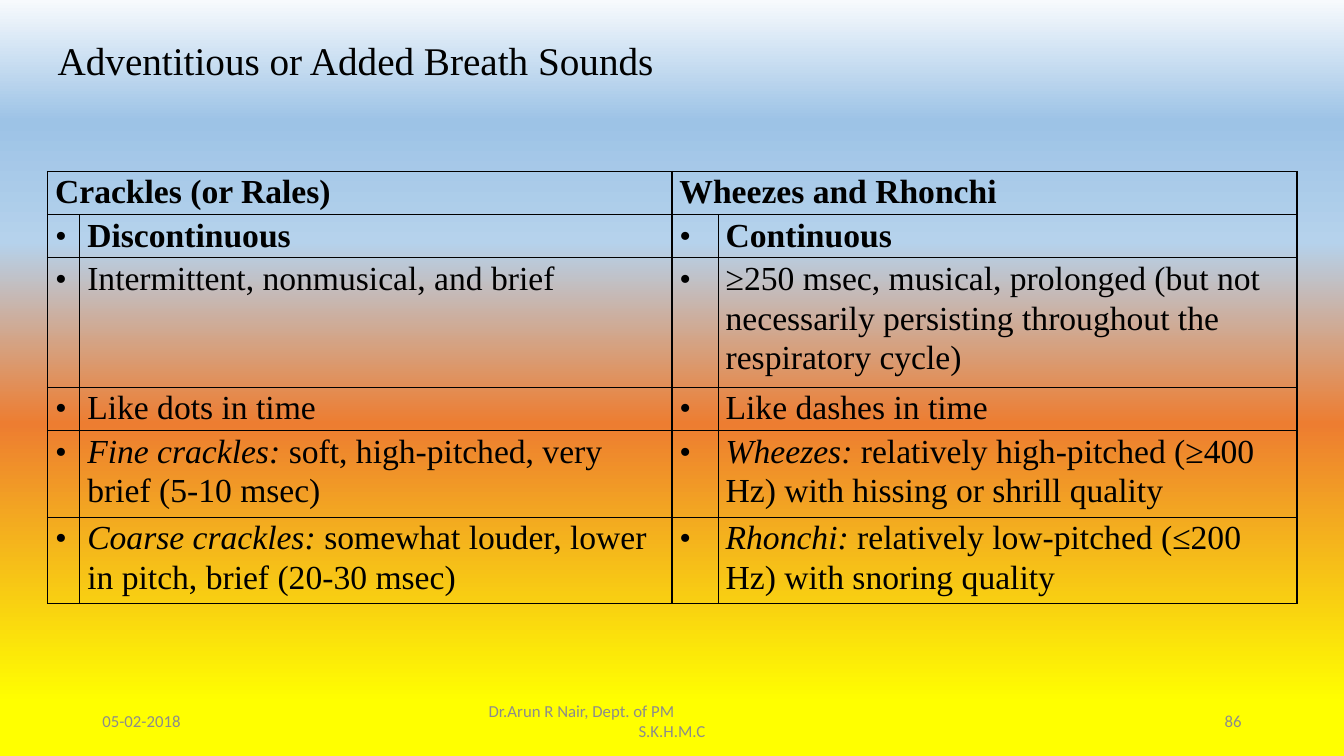
from lxml.etree import SubElement
from pptx import Presentation
from pptx.dml.color import RGBColor
from pptx.enum.text import MSO_ANCHOR, MSO_AUTO_SIZE, PP_ALIGN
from pptx.oxml.ns import qn
from pptx.util import Pt

SERIF = "Times New Roman"
GREY = "8C8C8C"
STOPS = [(0, "F7FAFD"), (16, "9DC3E6"), (32, "B5D2EC"), (56, "ED7D31"), (93, "FFFF00")]
COLS = [23, 423, 33, 413.5]
LINE = 30.9
ROWS = [LINE, LINE, 92.4, LINE, 2 * LINE, 2 * LINE]
HEADS = ["Crackles (or Rales)", "Wheezes and Rhonchi"]
# Each entry is an italic lead and the text after it.
PAIRS = [
    (("", "Discontinuous"), ("", "Continuous")),
    (("", "Intermittent, nonmusical, and brief"),
     ("", "≥250 msec, musical, prolonged (but not necessarily persisting "
          "throughout the respiratory cycle)")),
    (("", "Like dots in time"), ("", "Like dashes in time")),
    (("Fine crackles:", " soft, high-pitched, very brief (5-10 msec)"),
     ("Wheezes:", " relatively high-pitched (≥400 Hz) with hissing or shrill quality")),
    (("Coarse crackles:", " somewhat louder, lower in pitch, brief (20-30 msec)"),
     ("Rhonchi:", " relatively low-pitched (≤200 Hz) with snoring quality")),
]


def color(code):
    return RGBColor.from_string(code)


def write(para, text, lead="", font=SERIF, size=24, tint="000000", bold=False,
          align=PP_ALIGN.LEFT, space=None, after=0):
    para.alignment = align
    para.space_after = Pt(after)
    if space:
        para.line_spacing = space
    for part, slant in ((lead, True), (text, False)):
        if part:
            run = para.add_run()
            run.text = part
            run.font.name, run.font.size = font, Pt(size)
            run.font.bold, run.font.italic = bold, slant
            run.font.color.rgb = color(tint)


def paint(slide):
    """Fill the background with the vertical gradient."""
    fill = slide.background.fill
    fill.gradient()
    fill.gradient_angle = 270
    stops = next(slide.element.iter(qn("a:gsLst")))
    for old in list(stops):
        stops.remove(old)
    for place, code in STOPS:
        stop = SubElement(stops, qn("a:gs"), pos=str(place * 1000))
        SubElement(stop, qn("a:srgbClr"), val=code)


def add_title(slide, text):
    title = slide.shapes.title
    title.left, title.top, title.width, title.height = Pt(34), Pt(22), Pt(445), Pt(41)
    frame = title.text_frame
    frame.word_wrap = False
    frame.auto_size = MSO_AUTO_SIZE.SHAPE_TO_FIT_TEXT
    frame.vertical_anchor = MSO_ANCHOR.TOP
    write(frame.paragraphs[0], text, size=28)


def add_foot(slide, left, width, lines):
    """Add a footer box; each line is text, alignment and left margin."""
    box = slide.shapes.add_textbox(Pt(left), Pt(500.5), Pt(width), Pt(28.8))
    frame = box.text_frame
    frame.word_wrap = True
    frame.vertical_anchor = MSO_ANCHOR.MIDDLE
    for i, (text, align, margin) in enumerate(lines):
        para = frame.add_paragraph() if i else frame.paragraphs[0]
        if margin:
            para._p.get_or_add_pPr().set("marL", str(Pt(margin)))
        write(para, text, font="Calibri", size=12, tint=GREY, align=align)


def frame_cell(cell):
    """Give a cell thin black borders, no fill and tight margins."""
    props = cell._tc.get_or_add_tcPr()
    for side in ("lnL", "lnR", "lnT", "lnB"):
        line = SubElement(props, qn("a:" + side), w=str(Pt(1)))
        fill = SubElement(line, qn("a:solidFill"))
        SubElement(fill, qn("a:srgbClr"), val="000000")
    cell.fill.background()
    cell.margin_left = cell.margin_right = Pt(5.4)
    cell.margin_top = cell.margin_bottom = 0


def put(cell, text, **form):
    write(cell.text_frame.paragraphs[0], text, space=1.07, after=8, **form)


def add_grid(slide):
    table = slide.shapes.add_table(len(ROWS), len(COLS), Pt(34), Pt(122.4),
                                   Pt(sum(COLS)), Pt(sum(ROWS))).table
    table.first_row = table.horz_banding = False
    for col, width in zip(table.columns, COLS):
        col.width = Pt(width)
    for row, height in zip(table.rows, ROWS):
        row.height = Pt(height)
        for cell in row.cells:
            frame_cell(cell)
    for side, head in enumerate(HEADS):
        col = 2 * side
        table.cell(0, col).merge(table.cell(0, col + 1))
        put(table.cell(0, col), head, bold=True)
        for row, pair in enumerate(PAIRS, 1):
            lead, text = pair[side]
            put(table.cell(row, col), "•")
            put(table.cell(row, col + 1), text, lead=lead, bold=row == 1)


def main():
    deck = Presentation()
    deck.slide_width, deck.slide_height = Pt(960), Pt(540)
    slide = deck.slides.add_slide(deck.slide_layouts[5])
    paint(slide)
    add_title(slide, "Adventitious or Added Breath Sounds")
    add_grid(slide)
    add_foot(slide, 66, 216, [("05-02-2018", PP_ALIGN.LEFT, 0)])
    add_foot(slide, 318, 324, [("Dr.Arun R Nair, Dept. of PM", PP_ALIGN.LEFT, 24),
                               ("S.K.H.M.C", PP_ALIGN.CENTER, 0)])
    add_foot(slide, 678, 216, [("86", PP_ALIGN.RIGHT, 0)])
    deck.save("out.pptx")


if __name__ == "__main__":
    main()
